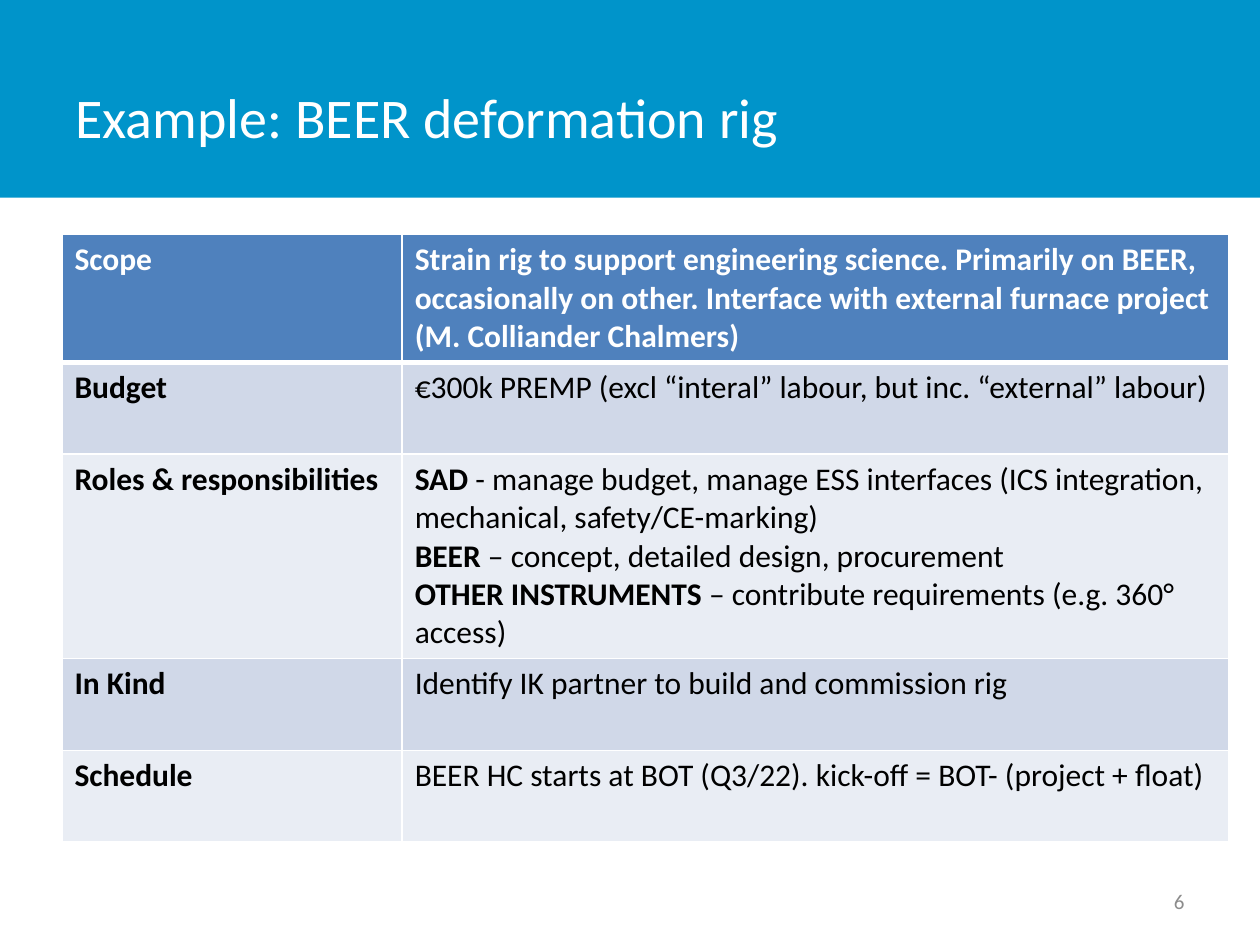
from dataclasses import dataclass

from lxml.etree import SubElement
from pptx import Presentation
from pptx.dml.color import RGBColor
from pptx.enum.shapes import MSO_SHAPE as Shape
from pptx.enum.text import MSO_ANCHOR as Anchor, PP_ALIGN as Align
from pptx.oxml.ns import qn
from pptx.util import Pt

FONT = "Calibri"
WHITE, BLACK, GREY = "FFFFFF", "000000", "8C8C8C"
BANNER, HEADER = "0094CA", "4F81BD"
BANDS = ("D0D8E8", "E9EDF4")
COLUMN_WIDTHS = (194.4, 472.3)


@dataclass(frozen=True)
class Run:
    text: str
    bold: bool = False


@dataclass(frozen=True)
class Row:
    label: str
    paragraphs: list[list[Run]]
    height: float = 52.4


ROWS = [
    Row("Scope", [[Run("Strain rig to support engineering science. Primarily on BEER, "
                       "occasionally on other. Interface with external furnace project "
                       "(M. Colliander Chalmers)", True)]], 73),
    Row("Budget", [[Run("€300k PREMP (excl “interal” labour, but inc. “external” labour)")]]),
    Row("Roles & responsibilities", [
        [Run("SAD ", True), Run("- manage budget, manage ESS interfaces (ICS integration, "
                                "mechanical, safety/CE-marking)")],
        [Run("BEER ", True), Run("– concept, detailed design, procurement")],
        [Run("OTHER INSTRUMENTS", True),
         Run(" – contribute requirements (e.g. 360° access)")],
    ], 117),
    Row("In Kind", [[Run("Identify IK partner to build and commission rig")]]),
    Row("Schedule", [[Run("BEER HC starts at BOT (Q3/22). kick-off = BOT- (project + float)")]]),
]


def rgb(value: str) -> RGBColor:
    return RGBColor.from_string(value)


def write(frame, paragraphs: list[list[Run]], *, size: float, color: str,
          align=Align.LEFT) -> None:
    frame.word_wrap = True
    for index, runs in enumerate(paragraphs):
        paragraph = frame.add_paragraph() if index else frame.paragraphs[0]
        paragraph.alignment = align
        for item in runs:
            run = paragraph.add_run()
            run.text = item.text
            run.font.name = FONT
            run.font.size = Pt(size)
            run.font.bold = item.bold
            run.font.color.rgb = rgb(color)


def add_text(slide, text: str, left: float, top: float, width: float, height: float,
             **text_format) -> None:
    frame = slide.shapes.add_textbox(Pt(left), Pt(top), Pt(width), Pt(height)).text_frame
    frame.vertical_anchor = Anchor.MIDDLE
    write(frame, [[Run(text)]], **text_format)


def add_banner(slide) -> None:
    banner = slide.shapes.add_shape(Shape.RECTANGLE, 0, 0, Pt(720), Pt(113))
    banner.shadow.inherit = False
    banner.fill.solid()
    banner.fill.fore_color.rgb = rgb(BANNER)
    banner.line.fill.background()


def set_borders(cell, widths: dict[str, float]) -> None:
    """Draw white borders; call before the fill, which must follow them in the XML."""
    properties = cell._tc.get_or_add_tcPr()
    for side in ("L", "R", "T", "B"):
        line = SubElement(properties, qn(f"a:ln{side}"), w=str(Pt(widths.get(side, 1))))
        fill = SubElement(line, qn("a:solidFill"))
        SubElement(fill, qn("a:srgbClr"), val=WHITE)


def add_project_table(slide, rows: list[Row]) -> None:
    table = slide.shapes.add_table(
        len(rows), len(COLUMN_WIDTHS), Pt(35.4), Pt(134),
        Pt(sum(COLUMN_WIDTHS)), Pt(sum(row.height for row in rows))).table
    for column, width in zip(table.columns, COLUMN_WIDTHS):
        column.width = Pt(width)
    for index, row in enumerate(rows):
        table.rows[index].height = Pt(row.height)
        is_header = index == 0
        fill = HEADER if is_header else BANDS[(index - 1) % 2]
        borders = {0: {"B": 3}, 1: {"T": 3}}.get(index, {})
        contents = ([[Run(row.label, True)]], row.paragraphs)
        for cell, paragraphs in zip(table.rows[index].cells, contents):
            set_borders(cell, borders)
            cell.fill.solid()
            cell.fill.fore_color.rgb = rgb(fill)
            write(cell.text_frame, paragraphs, size=18,
                  color=WHITE if is_header else BLACK)


def main() -> None:
    presentation = Presentation()
    presentation.slide_width, presentation.slide_height = Pt(720), Pt(540)
    slide = presentation.slides.add_slide(presentation.slide_layouts[6])
    add_banner(slide)
    add_text(slide, "Example: BEER deformation rig", 36, 21.6, 562, 90,
             size=32, color=WHITE)
    add_text(slide, "6", 516, 500.5, 168, 28.8, size=12, color=GREY, align=Align.RIGHT)
    add_project_table(slide, ROWS)
    presentation.save("out.pptx")


if __name__ == "__main__":
    main()
